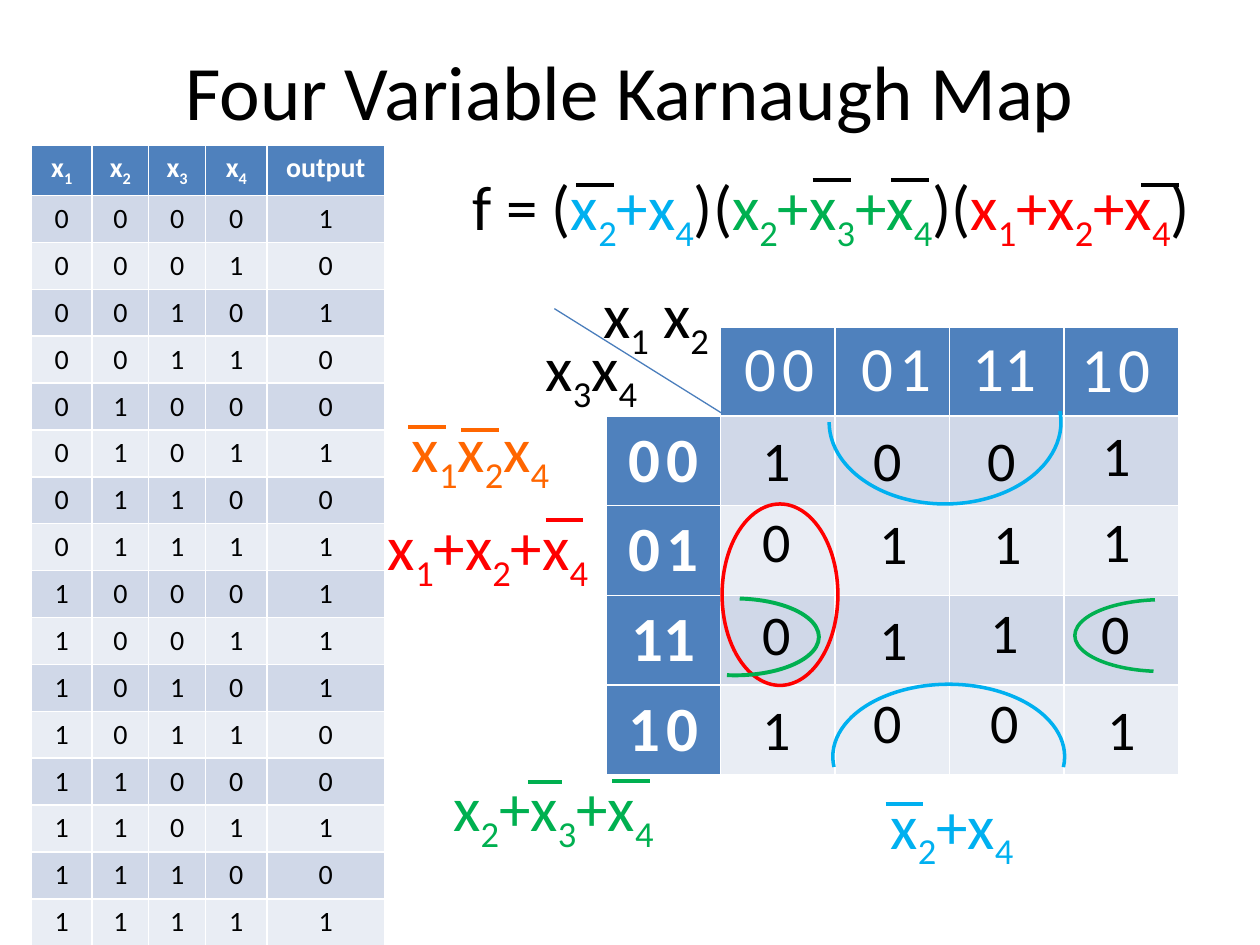
from itertools import groupby

from lxml.etree import SubElement
from pptx import Presentation
from pptx.dml.color import RGBColor
from pptx.enum.shapes import MSO_CONNECTOR as Link, MSO_SHAPE as Form
from pptx.enum.text import MSO_ANCHOR as Anchor, MSO_AUTO_SIZE as Fit, PP_ALIGN as Align
from pptx.oxml.ns import qn
from pptx.util import Pt

BLACK = RGBColor(0x00, 0x00, 0x00)
WHITE = RGBColor(0xFF, 0xFF, 0xFF)
HEAD = RGBColor(0x4F, 0x81, 0xBD)
BANDS = RGBColor(0xD0, 0xD8, 0xE8), RGBColor(0xE9, 0xED, 0xF4)
SLASH = RGBColor(0x4B, 0x7E, 0xBC)
BLUE = RGBColor(0x00, 0xB0, 0xF0)
GREEN = RGBColor(0x00, 0xB0, 0x50)
RED = RGBColor(0xFF, 0x00, 0x00)
ORANGE = RGBColor(0xFF, 0x66, 0x00)

OUTPUT = "1010010111100101"
CODES = ["0 0", "0 1", "11", "1 0"]
CODE_SPOTS = [(66.3, -2.9), (133.2, -2.9), (195.1, -2.9), (258.5, -2.2)]
MARKS = [
    ("1", 82.1, 52.6), ("0", 145.5, 52.6), ("0", 211, 52.6), ("1", 276.5, 49.7),
    ("0", 82.1, 98.6), ("1", 149.1, 100.1), ("1", 214.6, 100.1), ("1", 276.5, 98.6),
    ("0", 82.1, 151.9), ("1", 149.1, 154.8), ("1", 212.4, 150.5), ("0", 275.8, 151.2),
    ("1", 82.1, 205.9), ("0", 145.5, 202.3), ("0", 212.4, 202.3), ("1", 279.4, 205.9),
]
BLUE_ARCS = [
    ((127.5, 7.2, 132.5, 93.6), (354.6, 179.94), False, 2),
    ((129.6, 203.8, 132.5, 82.8), (174.78, 5.14), True, 2),
]
GREEN_ARCS = [
    ((267.9, 155.5, 100.1, 41), (104.03, 258.19), False, 2),
    ((25.9, 154.8, 95.8, 43.9), (78.04, 263.11), True, 2.25),
]
PRODUCT = [
    ("f = (", BLACK), ("x2+x4", BLUE), (")(", BLACK), ("x2+x3+x4", GREEN),
    (")(", BLACK), ("x1+x2+x4", RED), (")", BLACK),
]
TERMS = [
    ((501.8, 445.7, 98.6), [("x2+x4", BLUE)], [(4.3, 13.7, 21.6)], BLUE, 0),
    ((252, 435.6, 151.9), [("x2+x3+x4", GREEN)],
     [(49.7, 11.5, 19.4), (97.9, 10.8, 21.6)], GREEN, 0),
    ((214.6, 286.6, 151.9), [("x1+x2+x4", RED)], [(97.2, 10.8, 21.6)], RED, 0),
    ((254.9, 92.2, 465.8), PRODUCT,
     [(74.2, 13.7, 21.6), (209.5, 10.8, 21.6), (254.2, 10.8, 21.6), (397.4, 13.7, 21.6)],
     BLACK, 8.1),
    ((228.2, 230.4, 99.4), [("x1x2x4", ORANGE)],
     [(5, 13.7, 21.6), (35.3, 15.1, 21.6)], ORANGE, 0),
]


def style(para, size, color, bold=False, align=Align.CENTER):
    """Set the font and alignment of a paragraph."""
    font = para.font
    font.name, font.size, font.bold = "Calibri", Pt(size), bold
    font.color.rgb = color
    para.alignment = align


def add_vars(para, text, color=None):
    """Write variables with their digits as subscripts."""
    for digit, chars in groupby(text, str.isdigit):
        run = para.add_run()
        run.text = "".join(chars)
        if color is not None:
            run.font.color.rgb = color
        if digit:
            run.font._element.set("baseline", "-25000")


def add_code(para, code):
    """Write a two-bit code with a narrow gap."""
    for part in code.partition(" "):
        if part:
            run = para.add_run()
            run.text = part
            if part == " ":
                run.font.size = Pt(14)


def add_box(shapes, x, y, w, h=51.1, pad=0):
    """Add a wrapping text box and return its paragraph."""
    frame = shapes.add_textbox(Pt(x), Pt(y), Pt(w), Pt(h)).text_frame
    frame.word_wrap = True
    frame.auto_size = Fit.SHAPE_TO_FIT_TEXT
    frame.margin_left = Pt(7.2 + pad)
    return frame.paragraphs[0]


def add_line(shapes, x, y, dx, dy, color, width=2.25):
    """Add a straight line without a shadow."""
    line = shapes.add_connector(Link.STRAIGHT, Pt(x), Pt(y), Pt(x + dx), Pt(y + dy))
    line.line.color.rgb = color
    line.line.width = Pt(width)
    SubElement(line._element.spPr, qn("a:effectLst"))


def add_loop(shapes, form, box, color, width):
    """Add an unfilled round outline."""
    loop = shapes.add_shape(form, *map(Pt, box))
    loop.shadow.inherit = False
    loop.fill.background()
    loop.line.color.rgb = color
    loop.line.width = Pt(width)
    return loop


def add_arcs(shapes, x, y, arcs, color):
    """Add a group of arcs that wrap around the map edge."""
    group = shapes.add_group_shape().shapes
    for (dx, dy, w, h), angles, flip, width in arcs:
        arc = add_loop(group, Form.ARC, (x + dx, y + dy, w, h), color, width)
        for i, angle in enumerate(angles):
            arc.adjustments[i] = angle * 0.6
        if flip:
            arc._element.spPr.xfrm.set("flipH", "1")


def add_grid(shapes, x, y, widths, count, high):
    """Add a table with a dark head and banded rows."""
    grid = shapes.add_table(count, len(widths), Pt(x), Pt(y),
                            Pt(sum(widths)), Pt(high * count)).table
    for col, width in zip(grid.columns, widths):
        col.width = Pt(width)
    for r, row in enumerate(grid.rows):
        row.height = Pt(high)
        for cell in row.cells:
            cell.fill.solid()
            cell.fill.fore_color.rgb = BANDS[(r - 1) % 2] if r else HEAD
    return grid


def add_truth(shapes, x, y):
    """Build the truth table."""
    rows = [["x1", "x2", "x3", "x4", "output"]]
    rows += [[*f"{n:04b}", out] for n, out in enumerate(OUTPUT)]
    grid = add_grid(shapes, x, y, [34.6, 32.4, 32.4, 35.3, 67], len(rows), 26.4)
    for r, row in enumerate(rows):
        for c, text in enumerate(row):
            para = grid.cell(r, c).text_frame.paragraphs[0]
            style(para, 16, BLACK if r else WHITE, bold=not r)
            if r:
                para.add_run().text = text
            else:
                add_vars(para, text)


def add_map(shapes, x, y):
    """Build the Karnaugh map with its labels, values and loops."""
    grid = add_grid(shapes, x, y, [65.4] * 5, 5, 50.4)
    grid.first_col = True
    grid.cell(0, 0).fill.fore_color.rgb = WHITE
    for r, code in enumerate(CODES, 1):
        cell = grid.cell(r, 0)
        cell.fill.fore_color.rgb = HEAD
        cell.vertical_anchor = Anchor.MIDDLE
        para = cell.text_frame.paragraphs[0]
        style(para, 36, WHITE, bold=True)
        add_code(para, code)

    add_line(shapes, x + 66.3, y + 49, -95.8, -59.8, SLASH, 0.75)
    for text, dx, dy, w, pad in [("x1 x2", -25.2, -33.1, 95.8, 16.3),
                                 ("x3x4", -41.7, -2.9, 85.7, 0)]:
        para = add_box(shapes, x + dx, y + dy, w, pad=pad)
        style(para, 36, BLACK, align=Align.LEFT)
        add_vars(para, text)
    for code, (dx, dy) in zip(CODES, CODE_SPOTS):
        para = add_box(shapes, x + dx, y + dy, 65.5)
        style(para, 36, WHITE)
        add_code(para, code)
    for text, dx, dy in MARKS:
        para = add_box(shapes, x + dx, y + dy, 34.6, 46.1)
        style(para, 32, BLACK, align=Align.LEFT)
        para.add_run().text = text

    add_loop(shapes, Form.OVAL, (x + 66.3, y + 100.8, 66.2, 103.7), RED, 2)
    add_arcs(shapes, x, y, BLUE_ARCS, BLUE)
    add_arcs(shapes, x, y, GREEN_ARCS, GREEN)


def add_term(shapes, x, y, w, parts, bars, color, pad):
    """Build an expression with bars over its negated variables."""
    group = shapes.add_group_shape().shapes
    para = add_box(group, x, y, w, pad=pad)
    style(para, 36, color, align=Align.LEFT)
    for text, tint in parts:
        add_vars(para, text, tint if tint != color else None)
    for dx, dy, wide in bars:
        add_line(group, x + dx, y + dy, wide, 0, color)


def add_title(slide, x, y, w, h):
    """Place and format the title."""
    title = slide.shapes.title
    title.left, title.top, title.width, title.height = map(Pt, (x, y, w, h))
    title.text_frame.text = "Four Variable Karnaugh Map"
    title.text_frame.vertical_anchor = Anchor.MIDDLE
    style(title.text_frame.paragraphs[0], 44, BLACK)


def main():
    """Build and save the slide."""
    deck = Presentation()
    deck.slide_width, deck.slide_height = Pt(720), Pt(540)
    slide = deck.slides.add_slide(deck.slide_layouts[5])
    add_title(slide, 36, 14.4, 648, 73.4)
    add_truth(slide.shapes, 18, 82.8)
    add_map(slide.shapes, 346.3, 187.2)
    for box, *rest in TERMS:
        add_term(slide.shapes, *box, *rest)
    deck.save("out.pptx")


if __name__ == "__main__":
    main()
